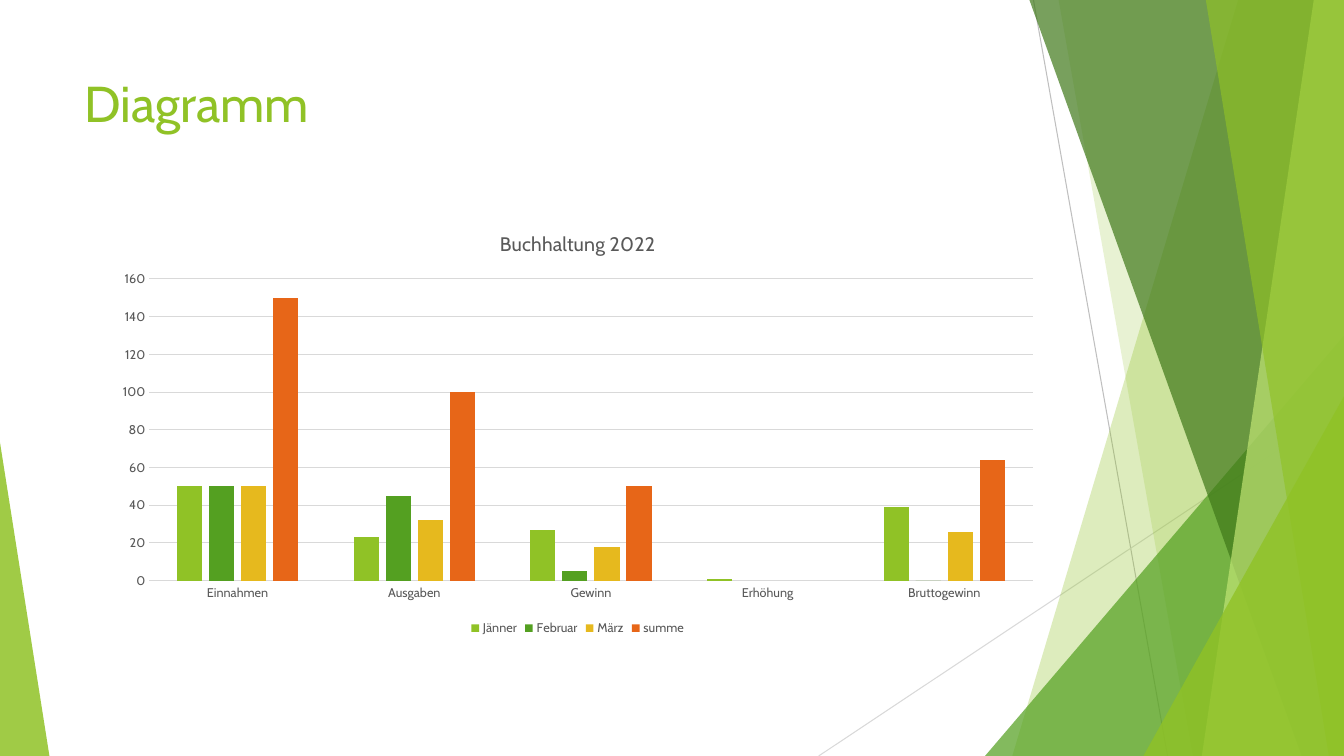
"""Build the bookkeeping chart slide with its green facet decoration."""
from dataclasses import dataclass

from lxml import etree
from pptx import Presentation
from pptx import util as u
from pptx.chart import data as chart_data
from pptx.dml import color
from pptx.enum import chart as charts, shapes, text
from pptx.oxml import ns

WIDTH, HEIGHT = 13.33, 7.5


@dataclass(frozen=True)
class Theme:
    """Font, colours and type sizes of the slide."""
    font: str = "Cabin"
    lime: str = "90C226"
    green: str = "54A021"
    forest: str = "3F7819"
    pale: str = "C0E474"
    yellow: str = "E6B91E"
    orange: str = "E76618"
    body: str = "595959"
    grid: str = "D9D9D9"
    line: str = "BFBFBF"
    hairline: float = 0.75
    title_size: int = 36
    chart_title_size: int = 14
    label_size: int = 9


THEME = Theme()

CATEGORIES = ["Einnahmen", "Ausgaben", "Gewinn", "Erhöhung", "Bruttogewinn"]
SERIES = [
    ("Jänner", THEME.lime, (50, 23, 27, 1, 39)),
    ("Februar", THEME.green, (50, 45, 5, None, 0)),
    ("März", THEME.yellow, (50, 32, 18, None, 26)),
    ("summe", THEME.orange, (150, 100, 50, None, 64)),
]


def rgb(value):
    """Turn a hex string into a colour."""
    return color.RGBColor.from_string(value)


def style_font(font, size, tint):
    """Set face, size and colour of a font."""
    font.name = THEME.font
    font.size = u.Pt(size)
    font.bold = False
    font.color.rgb = rgb(tint)


def style_line(line, tint):
    """Make a line a coloured hairline."""
    line.color.rgb = rgb(tint)
    line.width = u.Pt(THEME.hairline)


def paint(shape, tint, opacity):
    """Fill a shape with a translucent colour and no outline."""
    shape.shadow.inherit = False
    shape.line.fill.background()
    shape.fill.solid()
    shape.fill.fore_color.rgb = rgb(tint)
    clr = shape.fill._xPr.find(".//" + ns.qn("a:srgbClr"))
    etree.SubElement(clr, ns.qn("a:alpha"), val=str(opacity * 1000))


def add_hairline(page, start, end, tint):
    """Draw a thin straight line between two points."""
    points = [u.Inches(value) for value in (*start, *end)]
    line = page.shapes.add_connector(shapes.MSO_CONNECTOR.STRAIGHT, *points)
    style_line(line.line, tint)
    etree.SubElement(line._element.spPr, ns.qn("a:effectLst"))


def add_facet(page, top_x, bottom_x, tint, opacity):
    """Draw a full-height panel from a slanted edge to the right side."""
    corners = [(top_x, 0), (WIDTH, 0), (WIDTH, HEIGHT), (bottom_x, HEIGHT)]
    points = [(u.Inches(x), u.Inches(y)) for x, y in corners]
    builder = page.shapes.build_freeform(*points[0], scale=1.0)
    builder.add_line_segments(points[1:], close=True)
    paint(builder.convert_to_shape(), tint, opacity)


def add_corner(page, left, top, width, apex, tint, opacity):
    """Draw a triangle that stands on the bottom edge."""
    box = [u.Inches(value) for value in (left, top, width, HEIGHT - top)]
    corner = page.shapes.add_shape(shapes.MSO_SHAPE.ISOSCELES_TRIANGLE, *box)
    corner.adjustments[0] = apex
    paint(corner, tint, opacity)


def add_decoration(page):
    """Layer the lines, panels and corners from back to front."""
    add_hairline(page, (10.25, 0), (11.58, HEIGHT), THEME.line)
    add_hairline(page, (WIDTH, 4.03), (8.12, HEIGHT), THEME.grid)
    add_facet(page, 12.28, 10.04, THEME.lime, 30)
    add_facet(page, 10.5, 11.83, THEME.lime, 20)
    add_corner(page, 9.77, 3.33, 3.56, 1, THEME.green, 72)
    add_facet(page, 10.21, 12.91, THEME.forest, 70)
    add_facet(page, 13.03, 11.92, THEME.pale, 70)
    add_facet(page, 11.96, 13.18, THEME.lime, 65)
    add_corner(page, 11.34, 3.93, 1.99, 1, THEME.lime, 80)
    add_corner(page, 0, 4.39, 0.49, 0, THEME.lime, 85)


def add_title(page, words):
    """Write the slide title."""
    area = [u.Inches(value) for value in (0.74, 0.67, 9.4, 1.44)]
    frame = page.shapes.add_textbox(*area).text_frame
    frame.word_wrap = True
    frame.vertical_anchor = text.MSO_ANCHOR.TOP
    span = frame.paragraphs[0].add_run()
    span.text = words
    style_font(span.font, THEME.title_size, THEME.lime)


def style_axes(chart):
    """Style the category and value axes."""
    for axis in (chart.category_axis, chart.value_axis):
        axis.major_tick_mark = charts.XL_TICK_MARK.NONE
        axis.minor_tick_mark = charts.XL_TICK_MARK.NONE
        style_font(axis.tick_labels.font, THEME.label_size, THEME.body)
    style_line(chart.category_axis.format.line, THEME.grid)
    values = chart.value_axis
    values.minimum_scale, values.maximum_scale = 0, 160
    values.major_unit = 20
    values.format.line.fill.background()
    style_line(values.major_gridlines.format.line, THEME.grid)


def add_column_chart(page, heading):
    """Place the clustered column chart with title and legend."""
    numbers = chart_data.CategoryChartData()
    numbers.categories = CATEGORIES
    for name, _, values in SERIES:
        numbers.add_series(name, values)
    area = [u.Inches(value) for value in (1.03, 2.11, 9.4, 4.24)]
    kind = charts.XL_CHART_TYPE.COLUMN_CLUSTERED
    chart = page.shapes.add_chart(kind, *area, numbers).chart
    style_font(chart.font, THEME.label_size, THEME.body)

    chart.has_title = True
    span = chart.chart_title.text_frame.paragraphs[0].add_run()
    span.text = heading
    style_font(span.font, THEME.chart_title_size, THEME.body)
    chart.chart_title.include_in_layout = False

    chart.has_legend = True
    chart.legend.position = charts.XL_LEGEND_POSITION.BOTTOM
    chart.legend.include_in_layout = False
    style_font(chart.legend.font, THEME.label_size, THEME.body)

    style_axes(chart)
    plot = chart.plots[0]
    plot.vary_by_categories = False
    plot.gap_width, plot.overlap = 219, -27
    for series, (_, tint, _) in zip(plot.series, SERIES):
        series.invert_if_negative = False
        series.format.fill.solid()
        series.format.fill.fore_color.rgb = rgb(tint)


def main():
    """Build and save the deck."""
    deck = Presentation()
    deck.slide_width, deck.slide_height = u.Inches(WIDTH), u.Inches(HEIGHT)
    page = deck.slides.add_slide(deck.slide_layouts[6])
    add_decoration(page)
    add_title(page, "Diagramm")
    add_column_chart(page, "Buchhaltung 2022")
    deck.save("out.pptx")


if __name__ == "__main__":
    main()
